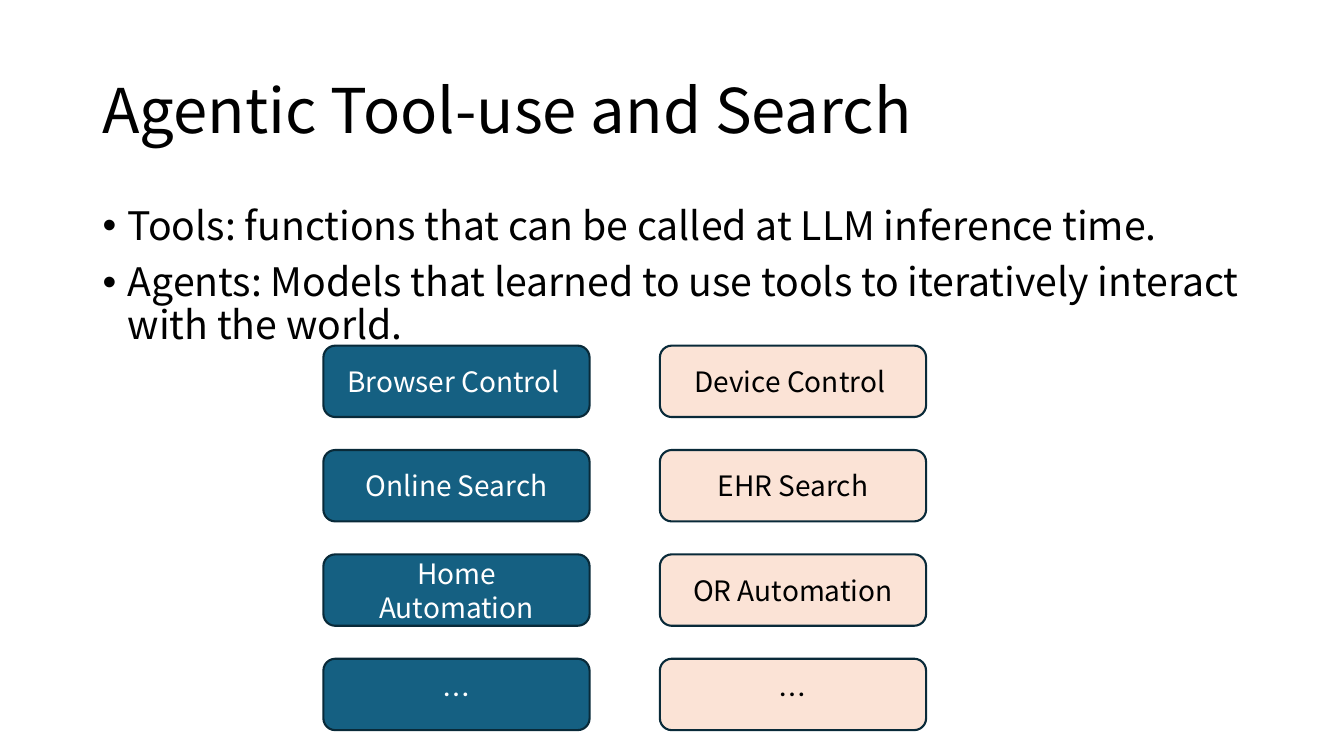
from lxml import etree
from pptx import Presentation
from pptx.dml.color import RGBColor
from pptx.enum.shapes import MSO_SHAPE
from pptx.enum.text import MSO_ANCHOR, MSO_AUTO_SIZE, PP_ALIGN
from pptx.oxml.ns import qn
from pptx.util import Cm, Pt

ROUNDED = MSO_SHAPE.ROUNDED_RECTANGLE
MIDDLE, TOP = MSO_ANCHOR.MIDDLE, MSO_ANCHOR.TOP
LEFT, CENTER = PP_ALIGN.LEFT, PP_ALIGN.CENTER
NO_FIT = MSO_AUTO_SIZE.NONE

BLACK = RGBColor(0x00, 0x00, 0x00)
WHITE = RGBColor(0xFF, 0xFF, 0xFF)
TEAL = RGBColor(0x15, 0x60, 0x82)
PEACH = RGBColor(0xFB, 0xE3, 0xD6)
NAVY = RGBColor(0x09, 0x2A, 0x39)

BULLETS = [
    "Tools: functions that can be called at LLM inference time.",
    "Agents: Models that learned to use tools to iteratively interact with the world.",
]
TOOL_COLUMNS = [
    (TEAL, WHITE, ["Browser Control ", "Online Search", "Home Automation", "…"]),
    (PEACH, BLACK, ["Device Control ", "EHR Search", "OR Automation", "…"]),
]
BOX_LEFT, BOX_TOP = 8.15, 8.71
BOX_WIDTH, BOX_HEIGHT = 6.71, 1.8
COLUMN_STEP, ROW_STEP = 8.48, 2.63


class SlideBuilder:
    font_name = "Noto Sans CJK SC"

    def __init__(self, s):
        self.s = s

    def style(self, p, size, color, align):
        p.alignment = align
        p.font.name = self.font_name
        p.font.size = Pt(size)
        p.font.color.rgb = color

    def place(self, sp, left, top, width, height, anchor):
        sp.left, sp.top = Cm(left), Cm(top)
        sp.width, sp.height = Cm(width), Cm(height)
        tf = sp.text_frame
        tf.word_wrap = True
        tf.auto_size = NO_FIT
        tf.vertical_anchor = anchor
        return tf

    def title(self, text, *box):
        tf = self.place(self.s.shapes.title, *box, MIDDLE)
        tf.text = text
        p = tf.paragraphs[0]
        self.style(p, 44, BLACK, LEFT)
        p.line_spacing = 0.9

    def bullets(self, items, *box):
        tf = self.place(self.s.placeholders[1], *box, TOP)
        tf.text = "\n".join(items)
        for p in tf.paragraphs:
            self.style(p, 28, BLACK, LEFT)
            p.line_spacing = 0.9
            p.space_before = Pt(10)
            pPr = p._p.get_or_add_pPr()
            pPr.set("marL", str(Cm(0.635)))
            pPr.set("indent", str(-Cm(0.635)))
            bullet_font = etree.Element(qn("a:buFont"), typeface="Arial")
            bullet = etree.Element(qn("a:buChar"), char="•")
            pPr.find(qn("a:spcBef")).addnext(bullet_font)
            bullet_font.addnext(bullet)

    def box(self, text, left, top, width, height, fill, color):
        sp = self.s.shapes.add_shape(ROUNDED, Cm(left), Cm(top), Cm(width), Cm(height))
        sp.shadow.inherit = False
        sp.fill.solid()
        sp.fill.fore_color.rgb = fill
        sp.line.color.rgb = NAVY
        sp.line.width = Pt(1.5)
        tf = sp.text_frame
        tf.word_wrap = True
        tf.vertical_anchor = MIDDLE
        tf.text = text
        self.style(tf.paragraphs[0], 20, color, CENTER)


def main():
    prs = Presentation()
    prs.slide_width, prs.slide_height = Cm(33.87), Cm(19.05)
    builder = SlideBuilder(prs.slides.add_slide(prs.slide_layouts[1]))
    builder.title("Agentic Tool-use and Search", 2.33, 1.01, 29.21, 3.68)
    builder.bullets(BULLETS, 2.33, 5.08, 29.67, 12.09)
    for col, (fill, color, labels) in enumerate(TOOL_COLUMNS):
        for row, label in enumerate(labels):
            builder.box(label, BOX_LEFT + col * COLUMN_STEP, BOX_TOP + row * ROW_STEP,
                        BOX_WIDTH, BOX_HEIGHT, fill, color)
    prs.save("out.pptx")


if __name__ == "__main__":
    main()
